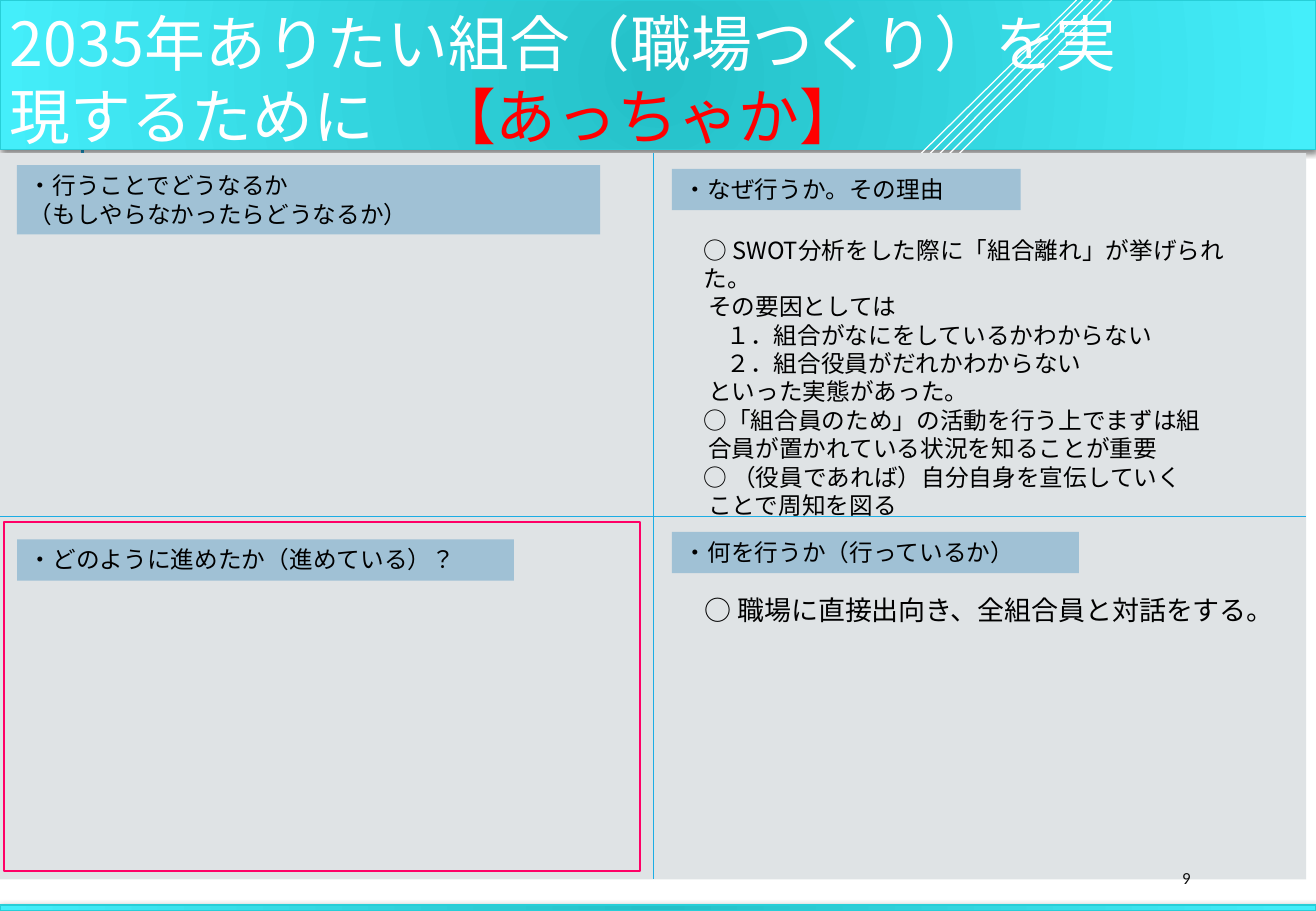
from lxml import etree
from pptx import Presentation
from pptx.dml.color import RGBColor
from pptx.enum.lang import MSO_LANGUAGE_ID as LANGUAGE
from pptx.enum.shapes import MSO_CONNECTOR, MSO_SHAPE
from pptx.enum.text import MSO_ANCHOR, PP_ALIGN
from pptx.oxml import parse_xml
from pptx.oxml.ns import nsdecls, qn
from pptx.util import Inches, Pt

WHITE = RGBColor(0xFF, 0xFF, 0xFF)
BLACK = RGBColor(0, 0, 0)
RED = RGBColor(0xFF, 0, 0)
BLUE = RGBColor(0x1C, 0xAD, 0xE4)
AQUA = RGBColor(0x27, 0xCE, 0xD7)
PANEL = RGBColor(0xDF, 0xE3, 0xE5)
LABEL = RGBColor(0xA0, 0xC1, 0xD5)
PINK = RGBColor(0xFF, 0x00, 0x66)
NUMBER = RGBColor(0x0D, 0x0D, 0x0D)
FONT = "Noto Sans CJK JP"

GRADIENT = f"""<a:gradFill {nsdecls('a')} rotWithShape="1"><a:gsLst>
<a:gs pos="0"><a:srgbClr val="24C0C8"/></a:gs>
<a:gs pos="100000"><a:srgbClr val="44EEFA"/></a:gs></a:gsLst>
<a:path path="circle"><a:fillToRect l="50000" t="50000" r="50000" b="50000"/></a:path>
</a:gradFill>"""
SHADOW = f"""<a:effectLst {nsdecls('a')}>
<a:outerShdw blurRad="50800" dist="12700" dir="5400000" rotWithShape="0">
<a:srgbClr val="000000"><a:alpha val="50000"/></a:srgbClr></a:outerShdw></a:effectLst>"""

deck = Presentation()
deck.slide_width, deck.slide_height = Inches(10.83), Inches(7.5)
page = deck.slides.add_slide(deck.slide_layouts[5])
shapes = page.shapes


def add_rule(x1, y1, x2, y2, color, width=0.75):
    rule = shapes.add_connector(MSO_CONNECTOR.STRAIGHT, Inches(x1), Inches(y1), Inches(x2), Inches(y2))
    rule.line.color.rgb = color
    rule.line.width = Pt(width)
    etree.SubElement(rule._element.spPr, qn("a:effectLst"))


def write_lines(box, lines, size, font=FONT, color=BLACK):
    """Fill a box with lines, each a list of spans after its left indent."""
    frame = box.text_frame
    frame.word_wrap = True
    for index, (indent, *texts) in enumerate(lines):
        para = frame.paragraphs[0] if index == 0 else frame.add_paragraph()
        if indent:
            para._p.get_or_add_pPr().set("marL", str(Inches(indent)))
        para.alignment = PP_ALIGN.LEFT
        para.line_spacing = 1.0
        para.font.size, para.font.name = Pt(size), font
        para.font.color.rgb = color
        for text in texts:
            span = para.add_run()
            span.text = text
            span.font.language_id = LANGUAGE.JAPANESE
            # East Asian glyphs use the same face
            etree.SubElement(span._r.get_or_add_rPr(), qn("a:ea")).set("typeface", font)


# Header and footer bars, with the diagonal strokes
add_rule(0.68, 1.9, 0.68, 0.9, BLUE, 1.5)
for top, height in ((0, 1.23), (7.45, 0.05)):
    bar = shapes.add_shape(MSO_SHAPE.RECTANGLE, 0, Inches(top), Inches(10.83), Inches(height))
    bar.line.color.rgb = AQUA
    bar.line.width = Pt(0.75)
    properties = bar._element.spPr
    properties.find(qn("a:prstGeom")).addnext(parse_xml(GRADIENT))
    properties.append(parse_xml(SHADOW))
add_rule(7.34, 1.5, 8.86, 0, WHITE)
for step in range(4):
    left = 7.37 + 0.08 * step
    add_rule(left, 1.55, left + 1.54, 0, WHITE)

# Title, brought in front of the header bar
title = shapes.title
title.left, title.top, title.width, title.height = Inches(-0.02), Inches(-0.03), Inches(9.45), Inches(1.36)
title.text_frame.vertical_anchor = MSO_ANCHOR.MIDDLE
write_lines(title, [(0, "2035年ありたい組合（職場つくり）を実現するために　", "【あっちゃか】")], 36, color=WHITE)
title.text_frame.paragraphs[0].runs[1].font.color.rgb = RED
shapes._spTree.append(title._element)

# Panel split into four quadrants
panel = shapes.add_shape(MSO_SHAPE.RECTANGLE, 0, Inches(1.26), Inches(10.75), Inches(5.98))
panel.shadow.inherit = False
panel.fill.solid()
panel.fill.fore_color.rgb = PANEL
panel.line.fill.background()
add_rule(5.38, 1.26, 5.38, 7.24, BLUE)
add_rule(0, 4.25, 10.75, 4.25, BLUE)

# Quadrant labels
labels = [
    (5.53, 1.39, 2.87, 0.34, ["・なぜ行うか。その理由"]),
    (5.53, 4.38, 3.35, 0.34, ["・何を行うか（行っているか）"]),
    (0.14, 4.44, 4.09, 0.34, ["・どのように進めたか（進めている）？"]),
    (0.14, 1.36, 4.8, 0.57, ["・行うことでどうなるか", "（もしやらなかったらどうなるか）"]),
]
for left, top, width, height, lines in labels:
    label = shapes.add_shape(MSO_SHAPE.RECTANGLE, Inches(left), Inches(top), Inches(width), Inches(height))
    label.shadow.inherit = False
    label.fill.solid()
    label.fill.fore_color.rgb = LABEL
    label.line.fill.background()
    label.text_frame.vertical_anchor = MSO_ANCHOR.TOP
    write_lines(label, [(0, line) for line in lines], 14)

# Page number
number = shapes.add_textbox(Inches(9.63), Inches(7.08), Inches(0.87), Inches(0.3))
number.text_frame.vertical_anchor = MSO_ANCHOR.MIDDLE
write_lines(number, [(0, "9")], 10, "Calibri", NUMBER)

# Quadrant contents
action = shapes.add_textbox(Inches(5.7), Inches(4.84), Inches(4.9), Inches(0.37))
write_lines(action, [(0, "○ 職場に直接出向き、全組合員と対話をする。")], 16)

reasons = shapes.add_textbox(Inches(5.69), Inches(1.89), Inches(4.9), Inches(2.22))
reasons.text_frame.margin_right = Inches(0.4)
write_lines(reasons, [
    (0, "○ SWOT分析をした際に「組合離れ」が挙げられた。"),
    (0.04, "その要因としては"),
    (0.19, "１．組合がなにをしているかわからない"),
    (0.19, "２．組合役員がだれかわからない"),
    (0.04, "といった実態があった。"),
    (0, "○「組合員のため」の活動を行う上でまずは組"),
    (0.04, "合員が置かれている状況を知ることが重要"),
    (0, "○ （役員であれば）自分自身を宣伝していく"),
    (0.04, "ことで周知を図る"),
], 14)

# Frame around the lower left quadrant
outline = shapes.add_shape(MSO_SHAPE.RECTANGLE, Inches(0.03), Inches(4.3), Inches(5.24), Inches(2.87))
outline.shadow.inherit = False
outline.fill.background()
outline.line.color.rgb = PINK
outline.line.width = Pt(1.25)

deck.save("out.pptx")
